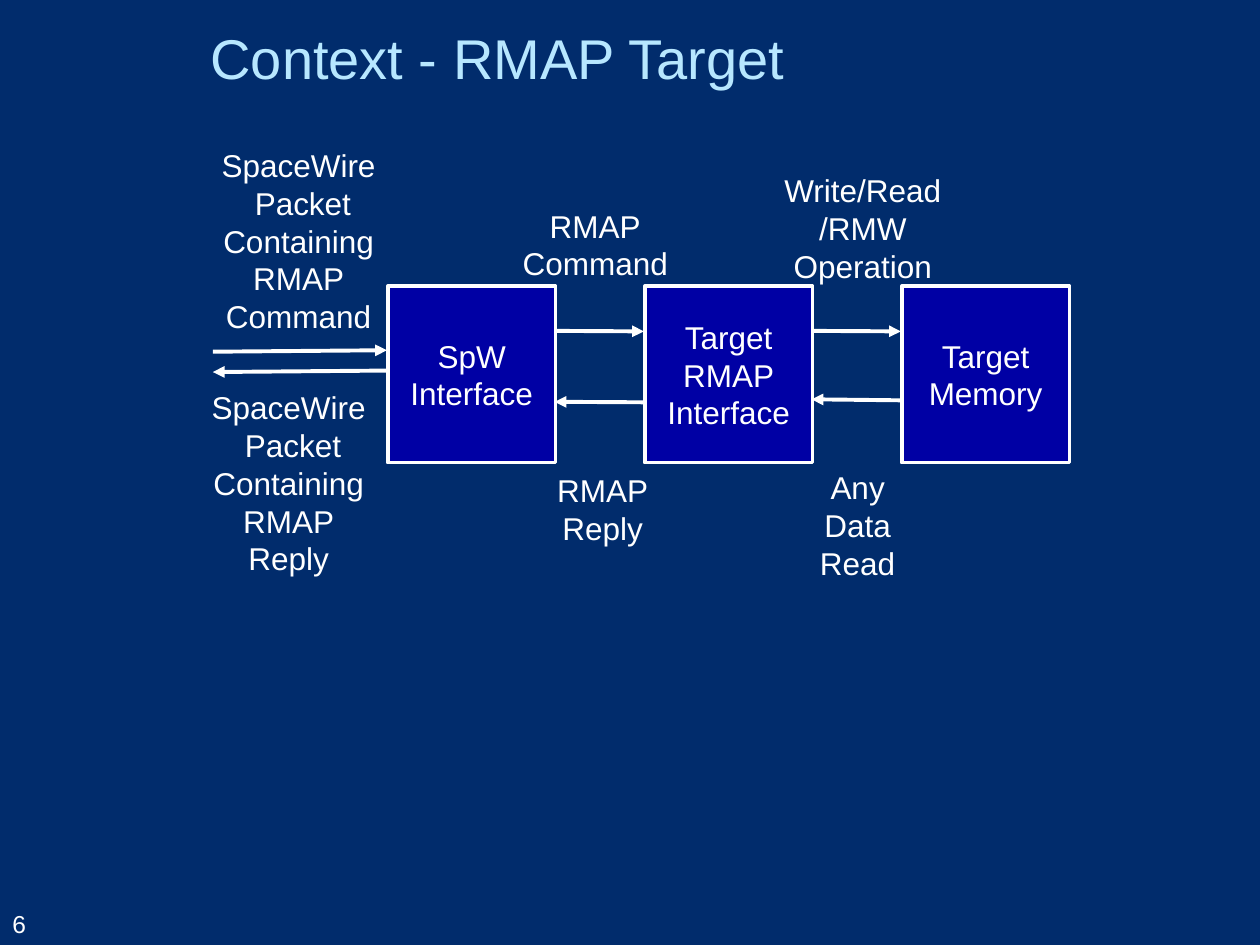
import pptx
import pptx.util
import pptx.dml.color
import pptx.enum.shapes
import pptx.enum.text
import pptx.oxml
import pptx.oxml.ns

Cm = pptx.util.Cm
Pt = pptx.util.Pt
ALIGN = pptx.enum.text.PP_ALIGN
ANCHOR = pptx.enum.text.MSO_ANCHOR
FIT = pptx.enum.text.MSO_AUTO_SIZE
WHITE = "FFFFFF"


def color(code):
    return pptx.dml.color.RGBColor.from_string(code)


def write(shape, text, size=18, ink=WHITE, align=ALIGN.CENTER,
          anchor=ANCHOR.MIDDLE, wrap=True, fit=FIT.NONE):
    frame = shape.text_frame
    frame.text = text
    frame.word_wrap = wrap
    frame.auto_size = fit
    frame.vertical_anchor = anchor
    for para in frame.paragraphs:
        para.alignment = align
        for run in para.runs:
            run.font.name = "Arial"
            run.font.size = Pt(size)
            run.font.color.rgb = color(ink)


def place(shape, left, top, width, height):
    shape.left, shape.top = Cm(left), Cm(top)
    shape.width, shape.height = Cm(width), Cm(height)


def block(slide, text, left):
    kind = pptx.enum.shapes.MSO_SHAPE.RECTANGLE
    shape = slide.shapes.add_shape(kind, Cm(left), Cm(5.77), Cm(3.38), Cm(3.56))
    shape.shadow.inherit = False
    shape.fill.solid()
    shape.fill.fore_color.rgb = color("0000A4")
    shape.line.color.rgb = color(WHITE)
    shape.line.width = Pt(2)
    write(shape, text)


def arrow(shapes, ends, tip):
    kind = pptx.enum.shapes.MSO_CONNECTOR.STRAIGHT
    line = shapes.add_connector(kind, *map(Cm, ends))
    line.line.color.rgb = color(WHITE)
    line.line.width = Pt(2.25)
    mark = pptx.oxml.ns.qn
    head = line.get_or_add_ln().makeelement(mark("a:" + tip), {"type": "triangle"})
    line.get_or_add_ln().append(head)
    props = line.element.spPr
    props.append(props.makeelement(mark("a:effectLst"), {}))


def flow(slide, text, ends, area, tip):
    group = slide.shapes.add_group_shape()
    arrow(group.shapes, ends, tip)
    label = group.shapes.add_textbox(*map(Cm, area))
    write(label, text, anchor=ANCHOR.TOP, wrap=False, fit=FIT.SHAPE_TO_FIT_TEXT)


def main():
    deck = pptx.Presentation()
    deck.slide_width, deck.slide_height = Cm(25.4), Cm(19.05)
    slide = deck.slides.add_slide(deck.slide_layouts[5])
    slide.background.fill.solid()
    slide.background.fill.fore_color.rgb = color("012C6C")

    title = slide.shapes.title
    place(title, 3.99, 0, 21.41, 2.29)
    write(title, "Context - RMAP Target", size=32, ink="B7E7FF", align=ALIGN.LEFT)
    page = slide.shapes.add_textbox(0, Cm(17.73), Cm(2.69), Cm(1.32))
    write(page, "6", size=14, align=ALIGN.LEFT, anchor=ANCHOR.BOTTOM)

    names = ["SpW\nInterface", "Target\nRMAP\nInterface", "Target\nMemory"]
    for step, name in enumerate(names):
        block(slide, name, 7.82 + 5.18 * step)

    packet = "SpaceWire\n Packet\nContaining\nRMAP\n"
    sends = [
        (packet + "Command", (4.29, 7.09, 7.8, 7.06), (4.19, 2.82, 3.66, 4.11)),
        ("RMAP\nCommand", (11.18, 6.67, 12.98, 6.68), (10.26, 4.04, 3.48, 1.8)),
        ("Write/Read\n/RMW\nOperation", (16.36, 6.67, 18.16, 6.68), (15.54, 3.33, 3.71, 2.57)),
    ]
    replies = [
        (packet + "Reply", (4.29, 7.5, 7.8, 7.47), (3.99, 7.7, 3.66, 4.11)),
        ("RMAP\nReply", (11.18, 8.1, 12.98, 8.11), (10.97, 9.37, 2.36, 1.8)),
        ("Any\nData\nRead", (16.36, 8.05, 18.16, 8.07), (16.26, 9.32, 2.06, 2.57)),
    ]
    for tip, flows in (("tailEnd", sends), ("headEnd", replies)):
        for text, ends, area in flows:
            flow(slide, text, ends, area, tip)

    deck.save("out.pptx")


if __name__ == "__main__":
    main()
